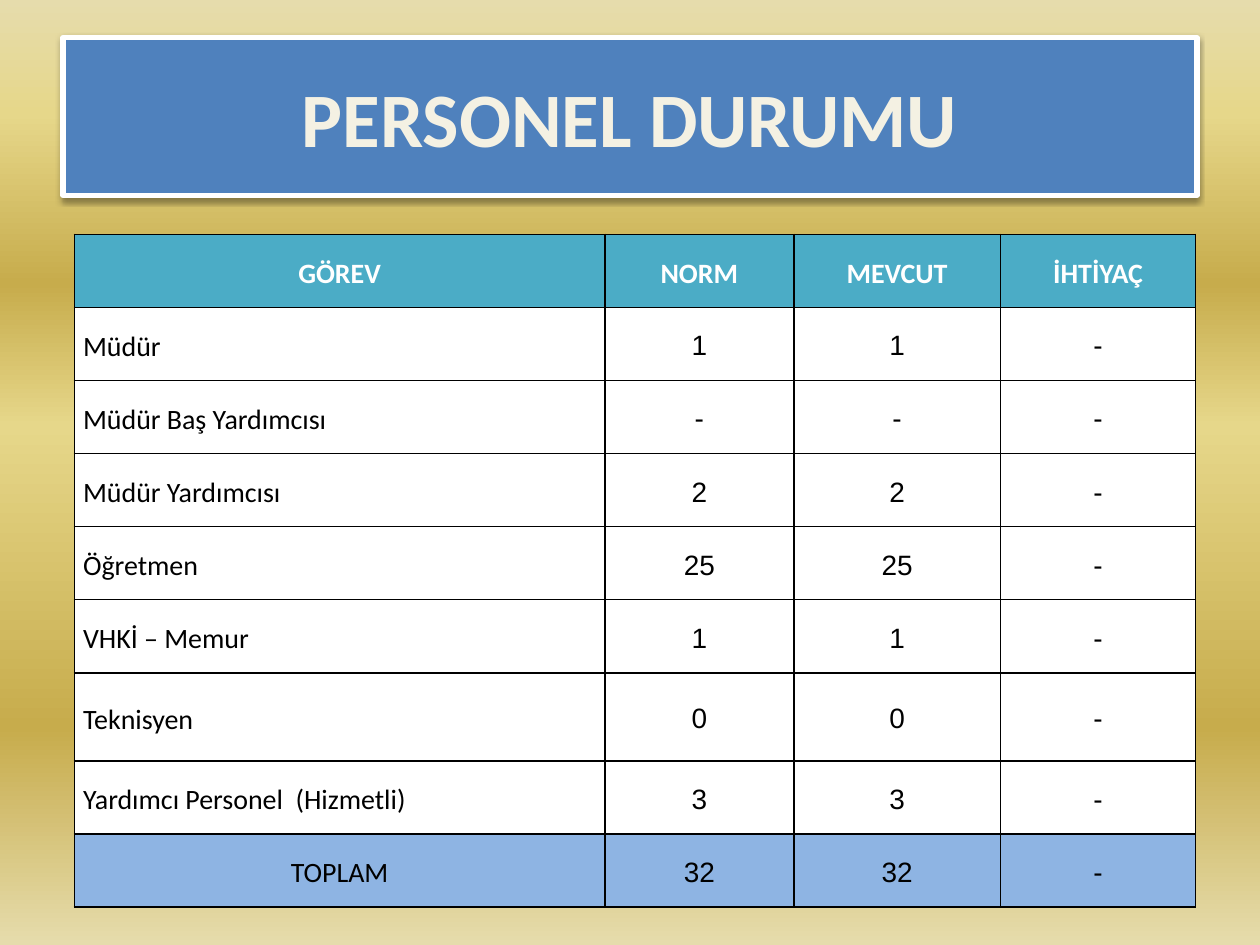
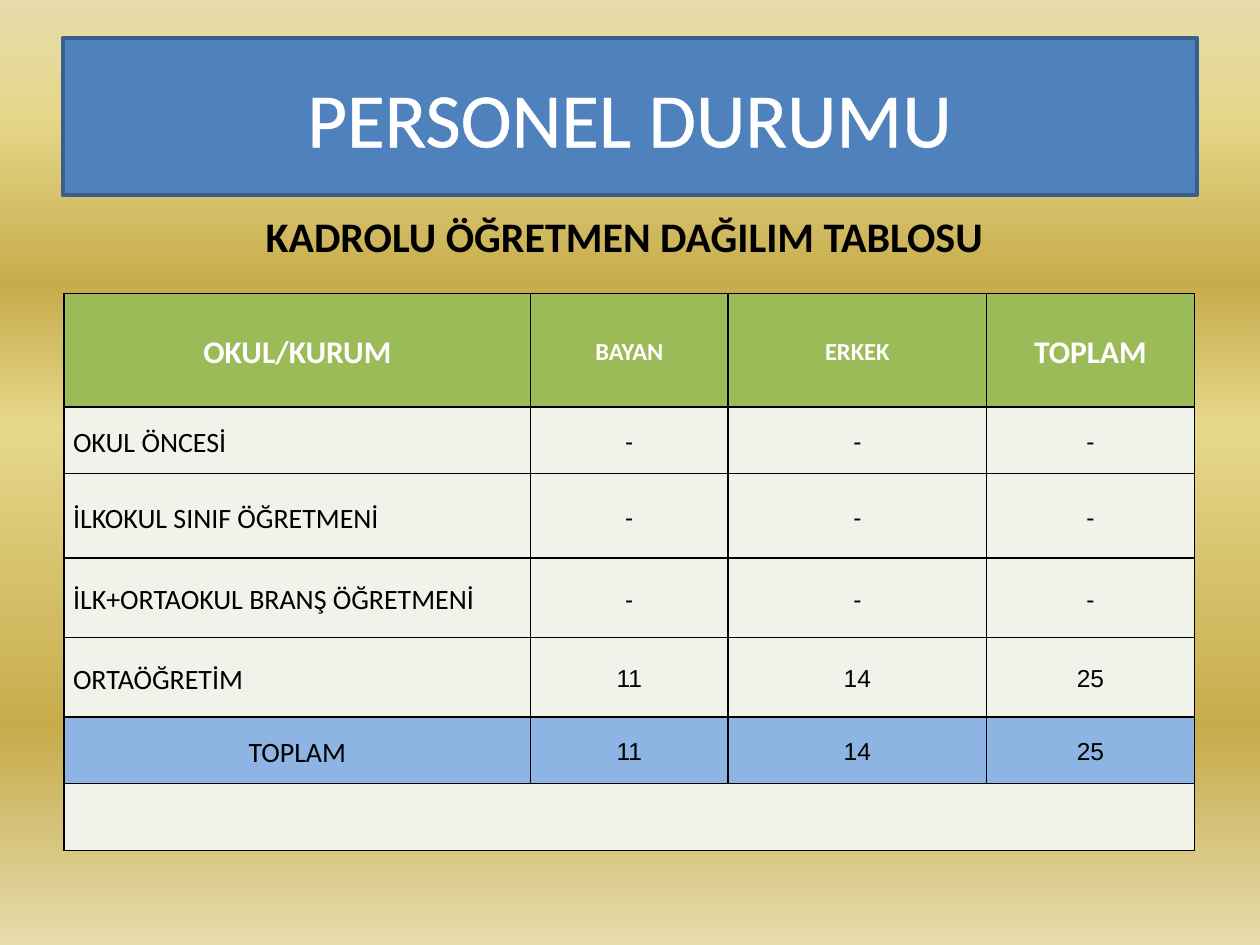
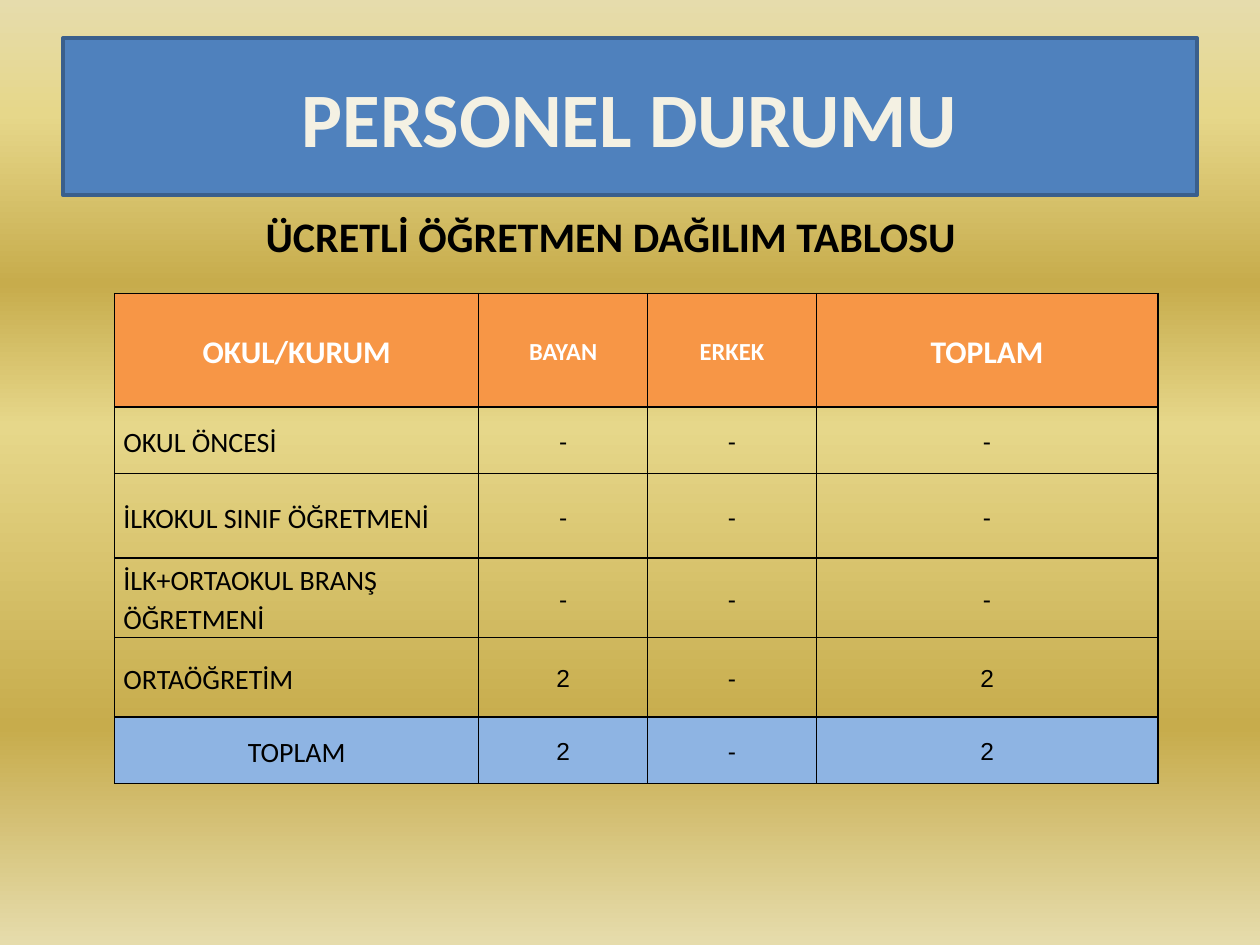
import pptx
import pptx.dml.color
import pptx.enum.shapes
import pptx.enum.text
import pptx.oxml
import pptx.oxml.ns
import pptx.util
from lxml import etree

Inches = pptx.util.Inches
Pt = pptx.util.Pt
RGBColor = pptx.dml.color.RGBColor
qn = pptx.oxml.ns.qn
PP_ALIGN = pptx.enum.text.PP_ALIGN
MSO_ANCHOR = pptx.enum.text.MSO_ANCHOR

BLACK = RGBColor(0x00, 0x00, 0x00)
WHITE = RGBColor(0xFF, 0xFF, 0xFF)
CREAM = RGBColor(0xF4, 0xF1, 0xE3)
NAVY = RGBColor(0x05, 0x46, 0x97)
TITLE_BLUE = RGBColor(0x4F, 0x81, 0xBD)
TITLE_EDGE = RGBColor(0x3A, 0x5F, 0x8C)
TOTAL_BLUE = RGBColor(0x8E, 0xB4, 0xE3)
TEAL = RGBColor(0x4B, 0xAC, 0xC6)
GREEN = RGBColor(0x9B, 0xBB, 0x59)
PALE_GREEN = RGBColor(0xEF, 0xF3, 0xEA)
ORANGE = RGBColor(0xF7, 0x96, 0x46)
SAND = RGBColor(0xE6, 0xDC, 0xAC)
STRAW = RGBColor(0xE6, 0xD7, 0x8A)
GOLD = RGBColor(0xC7, 0xAC, 0x4C)

BACKGROUND_STOPS = [(0, SAND), (12, STRAW), (30, GOLD), (45, STRAW), (77, GOLD), (100, SAND)]
HEADING_FONT = "Calibri"
NUMBER_FONT = "Arial"
TITLE_BOX = (0.5, 0.3, 9, 1.25)

STAFF_ROWS = [
    ["GÖREV", "NORM", "MEVCUT", "İHTİYAÇ"],
    ["Müdür", "1", "1", "-"],
    ["Müdür Baş Yardımcısı", "-", "-", "-"],
    ["Müdür Yardımcısı", "2", "2", "-"],
    ["Öğretmen", "25", "25", "-"],
    ["VHKİ – Memur", "1", "1", "-"],
    ["Teknisyen", "0", "0", "-"],
    ["Yardımcı Personel  (Hizmetli)", "3", "3", "-"],
    ["TOPLAM", "32", "32", "-"],
]
STAFF_HEIGHTS = [0.58] * 6 + [0.7] + [0.58] * 2
TEACHER_HEIGHTS = [0.9, 0.53, 0.67, 0.63, 0.63, 0.53]


def teacher_rows(counts):
    """Rows of a teacher table; only secondary schools have staff, so they equal the total."""
    none = ["-"] * 3
    return [
        ["OKUL/KURUM", "BAYAN", "ERKEK", "TOPLAM"],
        ["OKUL ÖNCESİ"] + none,
        ["İLKOKUL SINIF ÖĞRETMENİ"] + none,
        ["İLK+ORTAOKUL BRANŞ ÖĞRETMENİ"] + none,
        ["ORTAÖĞRETİM"] + counts,
        ["TOPLAM"] + counts,
    ]


def add_solid_fill(parent, color, alpha=100):
    fill = etree.SubElement(parent, qn("a:solidFill"))
    value = etree.SubElement(fill, qn("a:srgbClr"), val=str(color))
    if alpha < 100:
        etree.SubElement(value, qn("a:alpha"), val=str(alpha * 1000))


def add_run(paragraph, text, size, color, bold=False, font=HEADING_FONT):
    run = paragraph.add_run()
    run.text = text
    run.font.name = font
    run.font.size = Pt(size)
    run.font.bold = bold
    run.font.color.rgb = color
    return run


def set_background(master):
    fill = master.background.fill
    fill.gradient()
    fill.gradient_angle = 270
    stops = next(master.element.iter(qn("a:gsLst")))
    for stop in list(stops):
        stops.remove(stop)
    for position, color in BACKGROUND_STOPS:
        stop = etree.SubElement(stops, qn("a:gs"), pos=str(position * 1000))
        etree.SubElement(stop, qn("a:srgbClr"), val=str(color))


def add_shadow(shape):
    effects = shape._element.spPr.find(qn("a:effectLst"))
    shadow = etree.SubElement(effects, qn("a:outerShdw"), blurRad=str(Pt(3.1)),
                              dist=str(Pt(1.6)), dir="5400000", rotWithShape="0")
    color = etree.SubElement(shadow, qn("a:srgbClr"), val=str(BLACK))
    etree.SubElement(color, qn("a:alpha"), val="38000")


def add_title(slide, box, color=CREAM, bold=True, outline=(NAVY, 1),
              edge=(TITLE_EDGE, 2), shadow=False):
    shape = slide.shapes.add_shape(pptx.enum.shapes.MSO_SHAPE.RECTANGLE, *map(Inches, box))
    shape.shadow.inherit = False
    if shadow:
        add_shadow(shape)
    shape.fill.solid()
    shape.fill.fore_color.rgb = TITLE_BLUE
    shape.line.color.rgb = edge[0]
    shape.line.width = Pt(edge[1])
    frame = shape.text_frame
    frame.word_wrap = True
    frame.vertical_anchor = MSO_ANCHOR.MIDDLE
    paragraph = frame.paragraphs[0]
    paragraph.alignment = PP_ALIGN.CENTER
    run = add_run(paragraph, "PERSONEL DURUMU", 44, color, bold)
    line = etree.Element(qn("a:ln"), w=str(Pt(outline[1])))
    add_solid_fill(line, outline[0])
    run.font._element.insert(0, line)


def add_subtitle(slide, box, text):
    frame = slide.shapes.add_textbox(*map(Inches, box)).text_frame
    frame.word_wrap = False
    frame.auto_size = pptx.enum.text.MSO_AUTO_SIZE.SHAPE_TO_FIT_TEXT
    add_run(frame.paragraphs[0], text, 24, BLACK, True)


def style_cell(cell, fill):
    cell.vertical_anchor = MSO_ANCHOR.MIDDLE
    cell.margin_left = cell.margin_right = Inches(0.07)
    cell.margin_top = cell.margin_bottom = 0
    properties = cell._tc.get_or_add_tcPr()
    for side in ("a:lnL", "a:lnR", "a:lnT", "a:lnB"):
        add_solid_fill(etree.SubElement(properties, qn(side), w=str(Pt(1))), BLACK)
    if fill is None:
        cell.fill.background()
    else:
        cell.fill.solid()
        cell.fill.fore_color.rgb = fill


def add_staff_table(slide, corner, widths, heights, rows, header_fill, body_fill,
                    header_sizes, number_size):
    """Header row, body rows and a total row; a height beyond the rows makes a merged footer."""
    table = slide.shapes.add_table(len(heights), len(widths), *map(Inches, corner),
                                   Inches(sum(widths)), Inches(sum(heights))).table
    table.first_row = table.horz_banding = False
    for column, width in zip(table.columns, widths):
        column.width = Inches(width)
    for row, height in zip(table.rows, heights):
        row.height = Inches(height)

    total_index = len(rows) - 1
    fills = {0: header_fill, total_index: TOTAL_BLUE}
    for r in range(len(heights)):
        for c in range(len(widths)):
            style_cell(table.cell(r, c), fills.get(r, body_fill))

    for r, values in enumerate(rows):
        for c, text in enumerate(values):
            paragraph = table.cell(r, c).text_frame.paragraphs[0]
            paragraph.line_spacing = 1.15
            is_label = c == 0 and 0 < r < total_index
            paragraph.alignment = PP_ALIGN.LEFT if is_label else PP_ALIGN.CENTER
            if r == 0:
                add_run(paragraph, text, header_sizes[c], WHITE, True)
            elif c == 0:
                add_run(paragraph, text, 16, BLACK)
            else:
                add_run(paragraph, text, number_size, BLACK, font=NUMBER_FONT)

    if len(heights) > len(rows):
        table.cell(len(rows), 0).merge(table.cell(len(rows), len(widths) - 1))


def add_teacher_table(slide, left, widths, heights, counts, header_fill, body_fill):
    add_staff_table(slide, (left, 2.33), widths, heights, teacher_rows(counts),
                    header_fill, body_fill, [18, 14, 14, 18], 14)


def main():
    presentation = pptx.Presentation()
    presentation.slide_width = Inches(10)
    presentation.slide_height = Inches(7.5)
    set_background(presentation.slide_master)
    blank = presentation.slide_layouts[6]
    overview, permanent, hourly = [presentation.slides.add_slide(blank) for _ in range(3)]

    add_title(overview, TITLE_BOX, edge=(WHITE, 3), shadow=True)
    add_staff_table(overview, (0.59, 1.86), [4.21, 1.5, 1.64, 1.55], STAFF_HEIGHTS,
                    STAFF_ROWS, TEAL, WHITE, [16] * 4, 16)

    add_title(permanent, TITLE_BOX, WHITE, False, (WHITE, 1.45))
    add_teacher_table(permanent, 0.51, [3.7, 1.57, 2.05, 1.65], TEACHER_HEIGHTS + [0.53],
                      ["11", "14", "25"], GREEN, PALE_GREEN)
    add_subtitle(permanent, (2.01, 1.62, 5.95, 0.81), "KADROLU ÖĞRETMEN DAĞILIM TABLOSU")

    add_title(hourly, TITLE_BOX)
    add_teacher_table(hourly, 0.91, [2.89, 1.34, 1.34, 2.71], TEACHER_HEIGHTS,
                      ["2", "-", "2"], ORANGE, None)
    add_subtitle(hourly, (2.01, 1.62, 5.73, 0.81), "ÜCRETLİ ÖĞRETMEN DAĞILIM TABLOSU")

    presentation.save("out.pptx")


if __name__ == "__main__":
    main()
